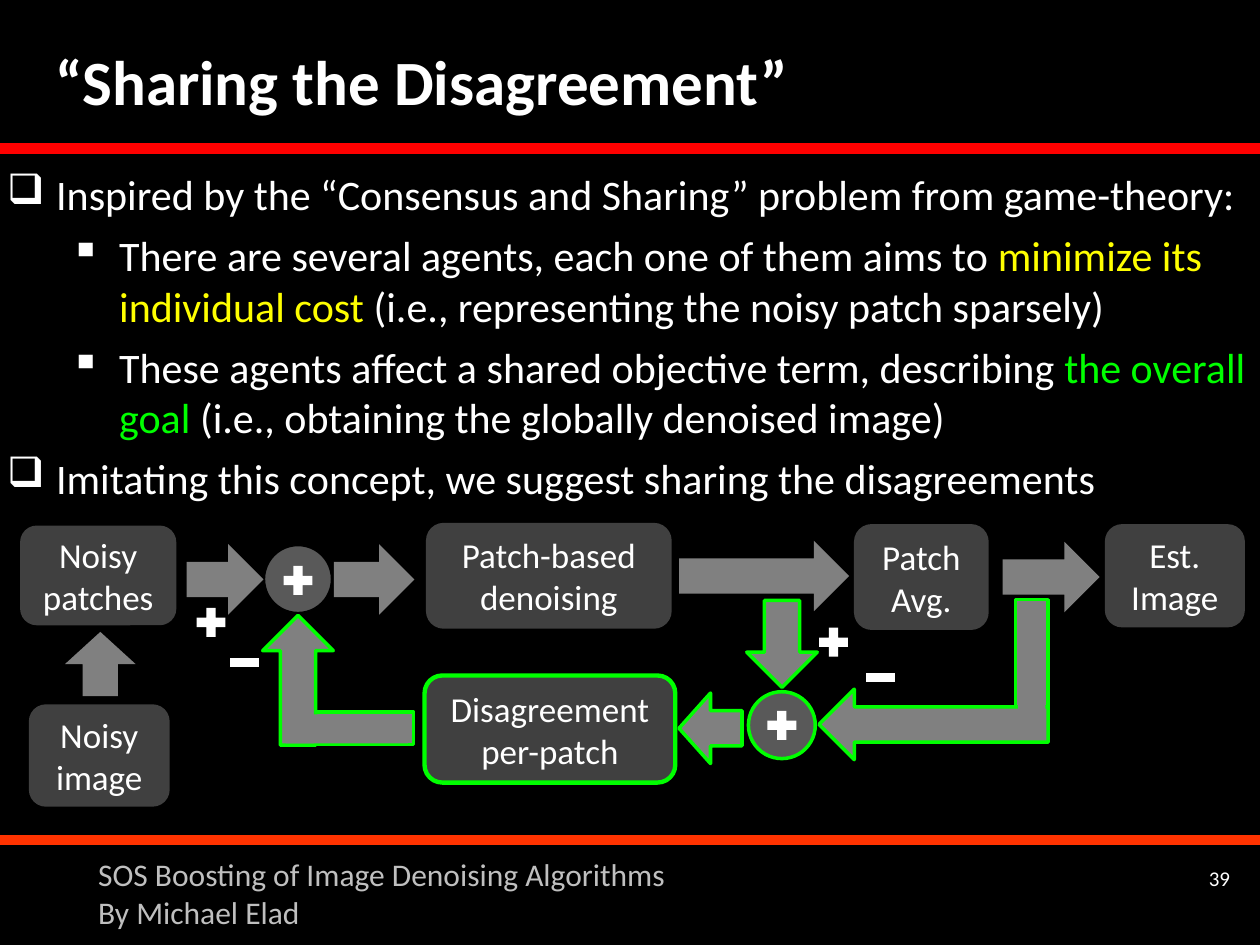
"""Build the "Sharing the Disagreement" slide."""
from dataclasses import dataclass

from lxml import etree
from pptx import Presentation
from pptx.dml.color import RGBColor
from pptx.enum.shapes import MSO_CONNECTOR, MSO_SHAPE
from pptx.enum.text import MSO_ANCHOR, PP_ALIGN
from pptx.oxml.ns import qn
from pptx.util import Pt

ARROW = MSO_SHAPE.RIGHT_ARROW
BAR = MSO_SHAPE.RECTANGLE
CIRCLE = MSO_SHAPE.OVAL
BOX = MSO_SHAPE.ROUNDED_RECTANGLE
MINUS = MSO_SHAPE.MATH_MINUS
PLUS = MSO_SHAPE.MATH_PLUS
STRAIGHT = MSO_CONNECTOR.STRAIGHT
MIDDLE, TOP = MSO_ANCHOR.MIDDLE, MSO_ANCHOR.TOP
LEFT, CENTER, RIGHT = PP_ALIGN.LEFT, PP_ALIGN.CENTER, PP_ALIGN.RIGHT


@dataclass(frozen=True)
class Theme:
    font: str = "Calibri"
    background: str = "000000"
    text: str = "FFFFFF"
    footer: str = "BFBFBF"
    title_rule: str = "FF0000"
    footer_rule: str = "FF3300"
    box: str = "404040"
    node: str = "595959"
    arrow: str = "808080"
    cost: str = "FFFF00"
    feedback: str = "00FF00"
    title_size: int = 36
    body_size: int = 24
    box_size: int = 20
    footer_size: int = 18
    number_size: int = 12


THEME = Theme()
ARROW_WIDTH = 40.3
NODE_SIZE = 38.2
SIGN_SIZE = 22.5
BULLET_INDENT = 28

BULLETS = [
    (0, [("Inspired by the “Consensus and Sharing” problem from game-theory:", THEME.text)]),
    (1, [("There are several agents, each one of them aims to ", THEME.text),
         ("minimize its individual cost ", THEME.cost),
         ("(i.e., representing the noisy patch sparsely)", THEME.text)]),
    (1, [("These agents affect a shared objective term, describing ", THEME.text),
         ("the overall goal", THEME.feedback),
         (" (i.e., obtaining the globally denoised image)", THEME.text)]),
    (0, [("Imitating this concept, we suggest sharing the disagreements", THEME.text)]),
]


def color(value):
    return RGBColor.from_string(value)


def style_font(font, size, value, bold=False):
    font.name = THEME.font
    font.size = Pt(size)
    font.bold = bold
    font.color.rgb = color(value)


def add_rule(slide, top, value):
    rule = slide.shapes.add_connector(STRAIGHT, Pt(0), Pt(top), Pt(720), Pt(top))
    rule.line.color.rgb = color(value)
    rule.line.width = Pt(6)
    etree.SubElement(rule._element.spPr, qn("a:effectLst"))


def add_text_box(slide, frame):
    text_frame = slide.shapes.add_textbox(*map(Pt, frame)).text_frame
    text_frame.word_wrap = True
    return text_frame


def add_label(slide, frame, text, size, value, align=LEFT, anchor=TOP, bold=False):
    text_frame = add_text_box(slide, frame)
    text_frame.vertical_anchor = anchor
    text_frame.text = text
    for paragraph in text_frame.paragraphs:
        paragraph.alignment = align
        for run in paragraph.runs:
            style_font(run.font, size, value, bold)


def set_bullet(paragraph, level):
    properties = paragraph._p.get_or_add_pPr()
    properties.set("marL", str(Pt(BULLET_INDENT + 36 * level)))
    properties.set("indent", str(-Pt(BULLET_INDENT)))
    etree.SubElement(properties, qn("a:buChar")).set("char", "❑▪"[level])


def add_bullets(slide, frame, bullets):
    text_frame = add_text_box(slide, frame)
    for index, (level, runs) in enumerate(bullets):
        paragraph = text_frame.add_paragraph() if index else text_frame.paragraphs[0]
        paragraph.level = level
        if index:
            paragraph.space_before = Pt(6)
        set_bullet(paragraph, level)
        for text, value in runs:
            run = paragraph.add_run()
            run.text = text
            style_font(run.font, THEME.body_size, value)


def add_shape(slide, kind, frame, fill, line=None, width=2, rotation=0):
    shape = slide.shapes.add_shape(kind, *map(Pt, frame))
    shape.shadow.inherit = False
    shape.rotation = rotation
    shape.fill.solid()
    shape.fill.fore_color.rgb = color(fill)
    if line:
        shape.line.color.rgb = color(line)
        shape.line.width = Pt(width)
    else:
        shape.line.fill.background()
    return shape


def add_box(slide, text, frame, line=None):
    text_frame = add_shape(slide, BOX, frame, THEME.box, line, 2.5).text_frame
    text_frame.word_wrap = True
    text_frame.vertical_anchor = MIDDLE
    text_frame.text = text
    paragraph = text_frame.paragraphs[0]
    paragraph.alignment = CENTER
    style_font(paragraph.runs[0].font, THEME.box_size, THEME.text)


def add_arrow(slide, left, top, length, line=None, rotation=0):
    add_shape(slide, ARROW, (left, top, length, ARROW_WIDTH), THEME.arrow, line, rotation=rotation)


def add_node(slide, left, top, line, width):
    add_shape(slide, CIRCLE, (left, top, NODE_SIZE, NODE_SIZE), THEME.node, line, width)


def add_sign(slide, kind, center_x, center_y):
    half = SIGN_SIZE / 2
    add_shape(slide, kind, (center_x - half, center_y - half, SIGN_SIZE, SIGN_SIZE), THEME.text)


def add_boxes(slide):
    add_box(slide, "Noisy image", (16.5, 402.5, 80.5, 58.5))
    add_box(slide, "Disagreement per-patch", (242.6, 386, 143.3, 61.2), THEME.feedback)
    add_box(slide, "Patch-based denoising", (243.4, 298.8, 140.4, 60.5))
    add_box(slide, "Est. Image", (631.4, 299.5, 80, 59))
    add_box(slide, "Noisy patches", (11.5, 300.3, 89.3, 57))
    add_box(slide, "Patch Avg.", (488, 299.5, 77, 60.5))


def add_forward_path(slide):
    for left, top, length in [(106.6, 311, 44), (190.8, 311, 46), (388, 309, 97.2), (573, 309.6, 55.4)]:
        add_arrow(slide, left, top, length)
    add_arrow(slide, 39, 359.3, 36.7, rotation=270)


def add_feedback_path(slide):
    green = THEME.feedback
    add_arrow(slide, 388, 396, 36, green, 180)
    add_shape(slide, BAR, (161.3, 406.8, 75, 18.7), THEME.arrow, green)
    add_shape(slide, BAR, (554.4, 368.6, 70.6, 18.7), THEME.arrow, green, rotation=270)
    add_arrow(slide, 422, 347.8, 49.7, green, 90)
    add_arrow(slide, 468, 393.8, 131, green, 180)
    add_arrow(slide, 133.2, 368.6, 74.2, green, 270)
    add_shape(slide, BAR, (555, 378, 69, 15.8), THEME.arrow, rotation=270)
    add_shape(slide, BAR, (163.4, 408.2, 69.8, 16.6), THEME.arrow)


def add_nodes_and_signs(slide):
    add_node(slide, 151.2, 311.8, THEME.background, 0.75)
    add_node(slide, 427.7, 395.3, THEME.feedback, 2)
    for center in [(170.3, 331.7), (120.6, 355.7), (476.3, 367), (446.8, 414.5)]:
        add_sign(slide, PLUS, *center)
    for center in [(140, 378.7), (503, 387.3)]:
        add_sign(slide, MINUS, *center)


def main():
    presentation = Presentation()
    presentation.slide_width, presentation.slide_height = Pt(720), Pt(540)
    slide = presentation.slides.add_slide(presentation.slide_layouts[6])
    slide.background.fill.solid()
    slide.background.fill.fore_color.rgb = color(THEME.background)
    add_rule(slide, 480, THEME.footer_rule)
    add_rule(slide, 85, THEME.title_rule)
    add_label(slide, (24.4, 12.2, 686, 67), "“Sharing the Disagreement”",
              THEME.title_size, THEME.text, anchor=MIDDLE, bold=True)
    add_label(slide, (560, 491, 150, 36), "39", THEME.number_size, THEME.text, RIGHT)
    add_bullets(slide, (-3, 93, 722, 200), BULLETS)
    add_boxes(slide)
    add_forward_path(slide)
    add_feedback_path(slide)
    add_nodes_and_signs(slide)
    add_label(slide, (49, 485.3, 360, 51), "SOS Boosting of Image Denoising Algorithms\nBy Michael Elad",
              THEME.footer_size, THEME.footer)
    presentation.save("out.pptx")


if __name__ == "__main__":
    main()
